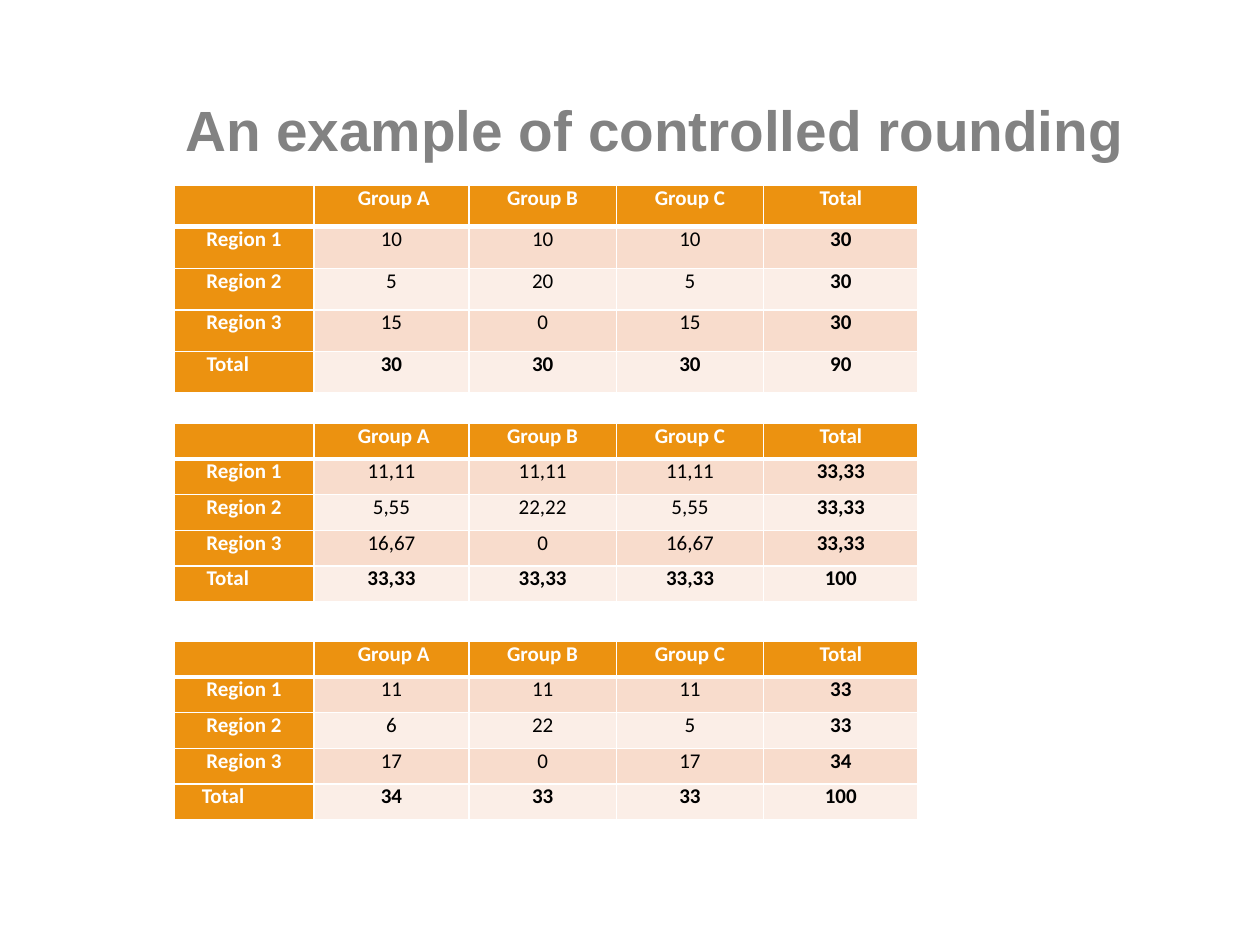
from lxml import etree
from pptx import Presentation
from pptx import util as u
from pptx.dml.color import RGBColor
from pptx.enum import text
from pptx.oxml.ns import qn

COLORS = {
    "title": "828282",
    "header": "EC9210",
    "odd": "F8DCCC",
    "even": "FBEEE7",
    "white": "FFFFFF",
    "black": "000000",
}
COLUMN_WIDTHS = [80, 88.6, 84.2, 84.2, 88.2]
GROUPS = ["", "Group A", "Group B", "Group C", "Total"]
REGIONS = ["Region 1", "Region 2", "Region 3", "Total"]
TABLES = [
    dict(top=105.8, row_height=23.8, total_indent=13.6, values=[
        ["10", "10", "10", "30"],
        ["5", "20", "5", "30"],
        ["15", "0", "15", "30"],
        ["30", "30", "30", "90"],
    ]),
    dict(top=241.9, row_height=20.4, total_indent=13.6, values=[
        ["11,11", "11,11", "11,11", "33,33"],
        ["5,55", "22,22", "5,55", "33,33"],
        ["16,67", "0", "16,67", "33,33"],
        ["33,33", "33,33", "33,33", "100"],
    ]),
    dict(top=366.5, row_height=20.4, total_indent=10.9, values=[
        ["11", "11", "11", "33"],
        ["6", "22", "5", "33"],
        ["17", "0", "17", "34"],
        ["34", "33", "33", "100"],
    ]),
]


def color(name):
    return RGBColor.from_string(COLORS[name])


def write(frame, content, font, size, ink, bold=False, align="LEFT", indent=0):
    para = frame.paragraphs[0]
    para.alignment = getattr(text.PP_ALIGN, align)
    if indent:
        properties = para._p.get_or_add_pPr()
        properties.set("marL", str(u.Pt(indent)))
        properties.set("indent", "0")
    if not content:
        etree.SubElement(para._p, qn("a:endParaRPr"), sz=str(size * 100))
        return
    span = para.add_run()
    span.text = content
    span.font.name = font
    span.font.size = u.Pt(size)
    span.font.bold = bold
    span.font.color.rgb = color(ink)


class SlideBuilder:
    title_font = "Arial"
    table_font = "Calibri"
    table_left = 99.4

    def __init__(self, deck):
        self.page = deck.slides.add_slide(deck.slide_layouts[5])

    def title(self, content, left, top, width, height):
        box = self.page.shapes.title
        box.left, box.top = u.Pt(left), u.Pt(top)
        box.width, box.height = u.Pt(width), u.Pt(height)
        frame = box.text_frame
        frame.word_wrap = True
        frame.auto_size = text.MSO_AUTO_SIZE.NONE
        frame.vertical_anchor = text.MSO_ANCHOR.MIDDLE
        write(frame, content, self.title_font, 32.4, "title", bold=True)

    def borders(self, cell, row):
        widths = {"L": 1, "R": 1, "T": 3 if row == 1 else 1, "B": 3 if row == 0 else 1}
        properties = cell._tc.get_or_add_tcPr()
        for side, width in widths.items():
            line = etree.SubElement(properties, qn(f"a:ln{side}"), w=str(u.Pt(width)))
            fill = etree.SubElement(line, qn("a:solidFill"))
            etree.SubElement(fill, qn("a:srgbClr"), val=COLORS["white"])

    def cell(self, cell, content, row, column, total_indent):
        heading = row == 0 or column == 0
        total_label = column == 0 and content == "Total"
        indent = total_indent if total_label else 2.7 if content == "Group A" else 0
        cell.margin_left = cell.margin_right = u.Pt(5)
        cell.margin_top = cell.margin_bottom = 0
        cell.vertical_anchor = text.MSO_ANCHOR.TOP
        self.borders(cell, row)
        cell.fill.solid()
        cell.fill.fore_color.rgb = color("header" if heading else "odd" if row % 2 else "even")
        write(cell.text_frame, content, self.table_font, 12,
              "white" if heading else "black",
              bold=heading or row == len(REGIONS) or column == len(GROUPS) - 1,
              align="LEFT" if total_label else "CENTER", indent=indent)

    def table(self, top, row_height, total_indent, values):
        rows = [GROUPS] + [[region, *line] for region, line in zip(REGIONS, values)]
        frame = self.page.shapes.add_table(
            len(rows), len(GROUPS), u.Pt(self.table_left), u.Pt(top),
            u.Pt(sum(COLUMN_WIDTHS)), u.Pt(row_height * len(rows)))
        table = frame.table
        for column, width in zip(table.columns, COLUMN_WIDTHS):
            column.width = u.Pt(width)
        for row, line in enumerate(rows):
            table.rows[row].height = u.Pt(row_height)
            for column, content in enumerate(line):
                self.cell(table.cell(row, column), content, row, column, total_indent)


def main():
    deck = Presentation()
    deck.slide_width, deck.slide_height = u.Pt(720), u.Pt(540)
    builder = SlideBuilder(deck)
    builder.title("An example of controlled rounding", 98.6, 28.5, 585.4, 90)
    for table in TABLES:
        builder.table(**table)
    deck.save("out.pptx")


if __name__ == "__main__":
    main()
